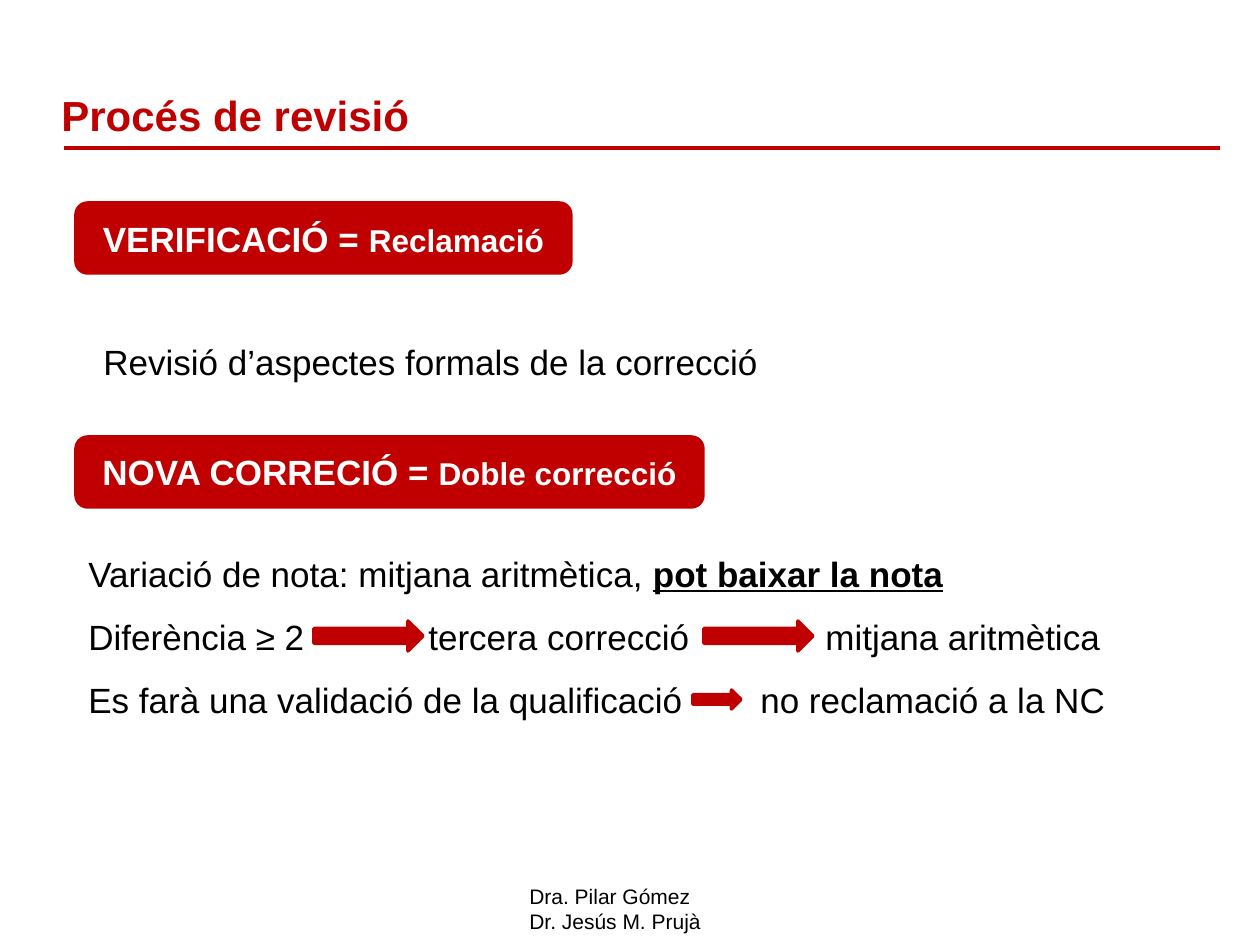
from lxml import etree
from pptx import Presentation
from pptx.dml.color import RGBColor
from pptx.enum.shapes import MSO_CONNECTOR, MSO_SHAPE
from pptx.enum.text import MSO_ANCHOR, PP_ALIGN
from pptx.oxml.ns import qn
from pptx.util import Emu, Pt

PX = 914400 // 126
RED = RGBColor(0xC0, 0x00, 0x00)
WHITE = RGBColor(0xFF, 0xFF, 0xFF)
BLACK = RGBColor(0x00, 0x00, 0x00)
FONT = "Arial"
STRAIGHT = MSO_CONNECTOR.STRAIGHT
ROUNDED = MSO_SHAPE.ROUNDED_RECTANGLE
ARROW = MSO_SHAPE.RIGHT_ARROW
MIDDLE = MSO_ANCHOR.MIDDLE
CENTER = PP_ALIGN.CENTER


def px(*lengths):
    return [Emu(length * PX) for length in lengths]


def add_span(para, text, size, color=BLACK, bold=False, underline=False):
    span = para.add_run()
    span.text = text
    font = span.font
    font.name = FONT
    font.size = Pt(size)
    font.color.rgb = color
    font.bold = bold
    font.underline = underline


def add_para(frame, first):
    return frame.paragraphs[0] if first else frame.add_paragraph()


def add_text(page, place, lines, size, color=BLACK, bold=False, wrap=False):
    frame = page.shapes.add_textbox(*px(*place)).text_frame
    frame.word_wrap = wrap
    for index, line in enumerate(lines):
        add_span(add_para(frame, index == 0), line, size, color, bold)
    return frame


def add_red_shape(page, kind, place):
    shape = page.shapes.add_shape(kind, *px(*place))
    shape.shadow.inherit = False
    shape.fill.solid()
    shape.fill.fore_color.rgb = RED
    shape.line.color.rgb = RED
    shape.line.width = Pt(2)
    return shape


def add_heading(page, place, term, meaning):
    frame = add_red_shape(page, ROUNDED, place).text_frame
    frame.word_wrap = True
    frame.vertical_anchor = MIDDLE
    para = frame.paragraphs[0]
    para.alignment = CENTER
    add_span(para, f"{term} = ", 20, WHITE, True)
    add_span(para, meaning, 18, WHITE, True)


def add_rule(page, left, right, y):
    rule = page.shapes.add_connector(STRAIGHT, *px(left, y, right, y))
    rule.line.color.rgb = RED
    rule.line.width = Pt(2.25)
    etree.SubElement(rule._element.spPr, qn("a:effectLst"))


def set_tabs(para, stops):
    tabs = etree.SubElement(para._p.get_or_add_pPr(), qn("a:tabLst"))
    for stop in stops:
        etree.SubElement(tabs, qn("a:tab"), pos=str(stop * PX), algn="l")


def add_rules_text(page, place, rows):
    frame = page.shapes.add_textbox(*px(*place)).text_frame
    frame.word_wrap = True
    for index, (stops, spans) in enumerate(rows):
        para = add_para(frame, index == 0)
        if stops:
            set_tabs(para, stops)
        if index:
            para.space_before = Pt(6)
        para.space_after = Pt(6)
        for text, strong in spans:
            add_span(para, text, 20, BLACK, strong, strong)


def main():
    deck = Presentation()
    deck.slide_width, deck.slide_height = px(1260, 945)
    page = deck.slides.add_slide(deck.slide_layouts[6])

    add_rule(page, 64, 1220, 148)
    add_text(page, (517, 877, 199, 63),
             ["Dra. Pilar Gómez", "Dr. Jesús M. Prujà"], 12)
    title = add_text(page, (49, 80, 1181, 69), ["Procés de revisió"],
                     24, RED, True, True)
    title.vertical_anchor = MIDDLE

    add_heading(page, (76, 203, 495, 70), "VERIFICACIÓ", "Reclamació")
    add_text(page, (91, 334, 685, 55),
             ["Revisió d’aspectes formals de la correcció"], 20)

    add_heading(page, (76, 437, 627, 70), "NOVA CORRECIÓ", "Doble correcció")
    add_rules_text(page, (76, 546, 1101, 183), [
        ([], [("Variació de nota: mitjana aritmètica, ", False),
              ("pot baixar la nota", True)]),
        ([340, 737],
         [("Diferència ≥ 2\ttercera correcció\tmitjana aritmètica", False)]),
        ([672], [("Es farà una validació de la qualificació\t"
                  "no reclamació a la NC", False)]),
    ])
    for place in ((314, 621, 109, 30), (704, 621, 109, 30), (693, 690, 48, 19)):
        add_red_shape(page, ARROW, place)

    deck.save("out.pptx")


if __name__ == "__main__":
    main()
